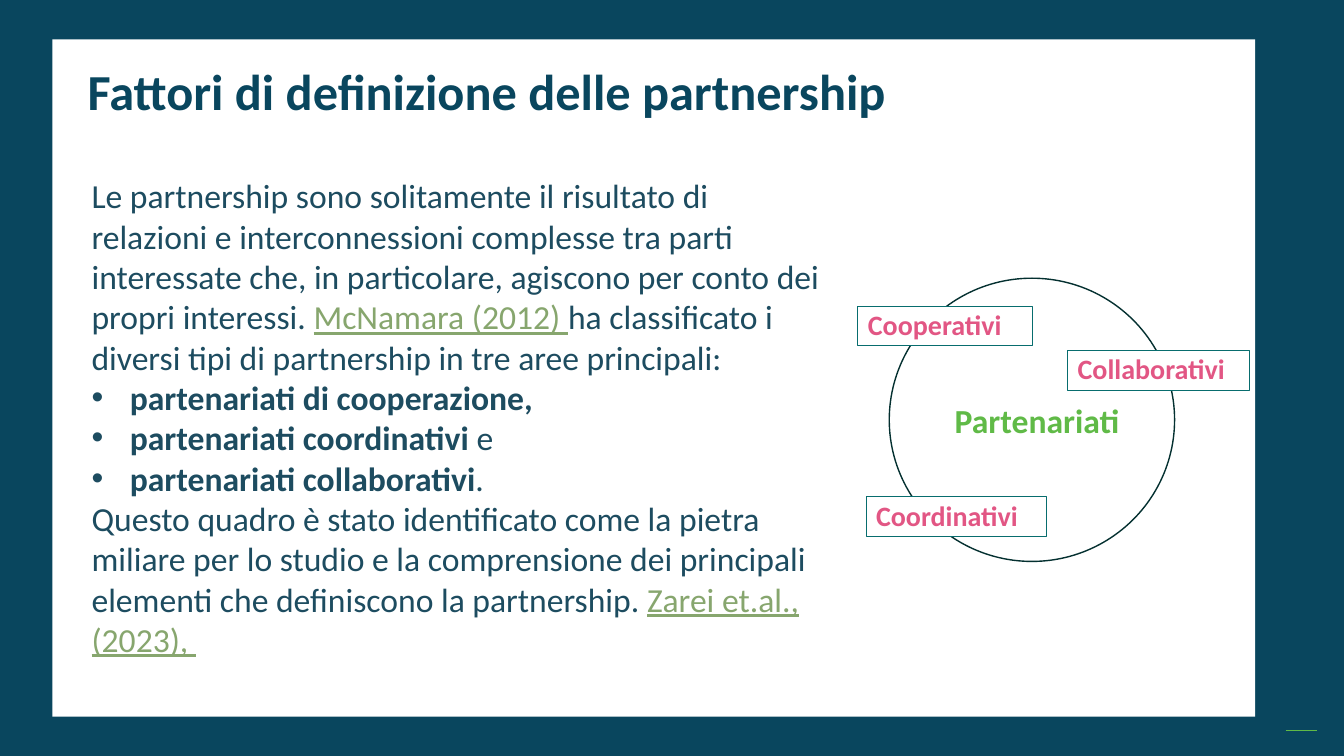
import pptx
import pptx.util
import pptx.dml.color
import pptx.enum.shapes
import pptx.enum.text
import pptx.oxml
import pptx.oxml.ns

Inches = pptx.util.Inches
Pt = pptx.util.Pt
SHAPES = pptx.enum.shapes.MSO_SHAPE

COLOURS = {
    "navy": "09465E", "white": "FFFFFF", "body": "1D4C60", "link": "87A66E",
    "green": "60BA47", "pink": "E25684", "teal": "086D6E", "ring": "043030",
}
FONT = "Calibri"
SLIDE_SIZE = (13.33, 7.5)
PANEL = (0.52, 0.39, 11.93, 6.72)
CIRCLE = (8.82, 2.76, 2.83, 2.81)
ACCENT_LINE = (12.75, 7.25, 13.06, 7.25)
BULLET_INDENT = 0.38
LABEL_HEIGHT = 0.39

# Text, box, size, colour
HEADINGS = [
    ("Fattori di definizione delle partnership", (0.77, 0.62, 10.99, 0.88), 36, "navy"),
    ("Partenariati", (9.37, 3.96, 2.01, LABEL_HEIGHT), 24, "green"),
]

# Text, left, top, width
LABELS = [
    ("Cooperativi", 8.51, 3.04, 1.73),
    ("Collaborativi", 10.59, 3.48, 1.8),
    ("Coordinativi", 8.59, 4.93, 1.79),
]

BODY_BOX = (0.81, 1.69, 7.48, 4.95)
# Bulleted, then runs of (text, style)
BODY = [
    (False, [
        ("Le partnership sono solitamente il risultato di relazioni e "
         "interconnessioni complesse tra parti interessate che, in particolare, "
         "agiscono per conto dei propri interessi. ", "plain"),
        ("McNamara (2012) ", "link"),
        ("ha classificato i diversi tipi di partnership in tre aree principali:", "plain"),
    ]),
    (True, [("partenariati di cooperazione,", "bold")]),
    (True, [("partenariati coordinativi ", "bold"), ("e", "plain")]),
    (True, [("partenariati collaborativi", "bold"), (".", "plain")]),
    (False, [
        ("Questo quadro è stato identificato come la pietra miliare per lo studio e "
         "la comprensione dei principali elementi che definiscono la partnership. ", "plain"),
        ("Zarei et.al., (2023), ", "link"),
    ]),
]


def colour(name):
    return pptx.dml.color.RGBColor.from_string(COLOURS[name])


def add_shape(slide, kind, box, fill=None, line=None, line_width=1):
    shape = slide.shapes.add_shape(kind, *map(Inches, box))
    shape.shadow.inherit = False
    if fill:
        shape.fill.solid()
        shape.fill.fore_color.rgb = colour(fill)
    else:
        shape.fill.background()
    if line:
        shape.line.color.rgb = colour(line)
        shape.line.width = Pt(line_width)
    else:
        shape.line.fill.background()
    return shape


def add_text_box(slide, box):
    frame = slide.shapes.add_textbox(*map(Inches, box)).text_frame
    frame.word_wrap = True
    return frame


def add_run(paragraph, text, size, colour_name, bold=False, underline=False):
    run = paragraph.add_run()
    run.text = text
    run.font.name = FONT
    run.font.size = Pt(size)
    run.font.color.rgb = colour(colour_name)
    run.font.bold = bold
    run.font.underline = underline


def write_heading(frame, text, size, colour_name):
    frame.vertical_anchor = pptx.enum.text.MSO_ANCHOR.TOP
    paragraph = frame.paragraphs[0]
    paragraph.alignment = pptx.enum.text.PP_ALIGN.LEFT
    paragraph.line_spacing = 0.9
    add_run(paragraph, text, size, colour_name, bold=True)


def add_bullet(paragraph):
    properties = paragraph._p.get_or_add_pPr()
    properties.set("marL", str(Inches(BULLET_INDENT)))
    properties.set("indent", str(-Inches(BULLET_INDENT)))
    namespace = pptx.oxml.ns.nsdecls("a")
    properties.append(pptx.oxml.parse_xml(f'<a:buFont {namespace} typeface="Arial"/>'))
    properties.append(pptx.oxml.parse_xml(f'<a:buChar {namespace} char="•"/>'))


def add_accent_line(slide):
    line = slide.shapes.add_connector(
        pptx.enum.shapes.MSO_CONNECTOR.STRAIGHT, *map(Inches, ACCENT_LINE))
    line.line.color.rgb = colour("green")
    line.line.width = Pt(1)
    effects = pptx.oxml.parse_xml(f'<a:effectLst {pptx.oxml.ns.nsdecls("a")}/>')
    line._element.spPr.append(effects)


def add_body(slide):
    frame = add_text_box(slide, BODY_BOX)
    for index, (bulleted, runs) in enumerate(BODY):
        paragraph = frame.add_paragraph() if index else frame.paragraphs[0]
        if bulleted:
            add_bullet(paragraph)
        for text, style in runs:
            is_link = style == "link"
            add_run(paragraph, text, 24, "link" if is_link else "body",
                    bold=style == "bold", underline=is_link)


def main():
    presentation = pptx.Presentation()
    presentation.slide_width, presentation.slide_height = map(Inches, SLIDE_SIZE)
    slide = presentation.slides.add_slide(presentation.slide_layouts[6])

    add_shape(slide, SHAPES.RECTANGLE, (0, 0, *SLIDE_SIZE), fill="navy")
    add_shape(slide, SHAPES.RECTANGLE, PANEL, fill="white")
    add_accent_line(slide)
    add_shape(slide, SHAPES.OVAL, CIRCLE, line="ring")
    add_body(slide)
    for text, left, top, width in LABELS:
        label = add_shape(slide, SHAPES.RECTANGLE, (left, top, width, LABEL_HEIGHT),
                          fill="white", line="teal", line_width=0.75)
        write_heading(label.text_frame, text, 20, "pink")
    for text, box, size, colour_name in HEADINGS:
        write_heading(add_text_box(slide, box), text, size, colour_name)

    presentation.save("out.pptx")


if __name__ == "__main__":
    main()
